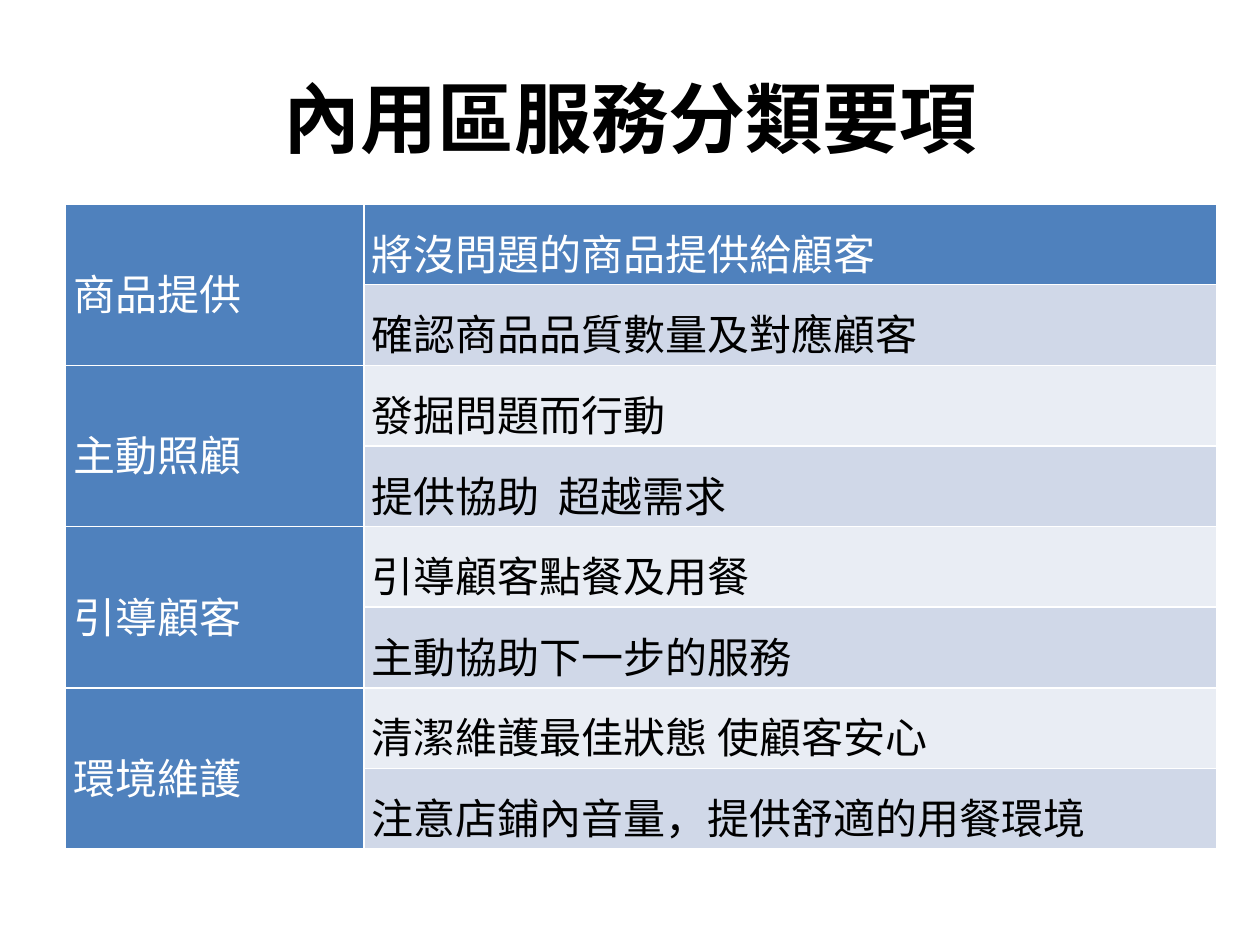
from lxml.etree import SubElement
from pptx import Presentation
from pptx.dml.color import RGBColor
from pptx.enum.text import MSO_ANCHOR as Anchor, PP_ALIGN as Align
from pptx.oxml import parse_xml
from pptx.oxml.ns import nsdecls, qn

PX = 9144  # 100 px to the inch
FONT = "Noto Sans CJK SC"
COLORS = {"accent": "4F81BD", "dark_band": "D0D8E8", "light_band": "E9EDF4",
          "white": "FFFFFF", "black": "000000"}
SERVICES = [
    ("商品提供", ["將沒問題的商品提供給顧客", "確認商品品質數量及對應顧客"]),
    ("主動照顧", ["發掘問題而行動", "提供協助  超越需求"]),
    ("引導顧客", ["引導顧客點餐及用餐", "主動協助下一步的服務"]),
    ("環境維護", ["清潔維護最佳狀態 使顧客安心", "注意店鋪內音量，提供舒適的用餐環境"]),
]
COLUMN_WIDTHS = [237, 677]
ROW_HEIGHT = 64
CELL_FORMAT = {"margin_left": 6 * PX, "margin_right": 6 * PX, "margin_top": 0,
               "margin_bottom": 0, "vertical_anchor": Anchor.MIDDLE}


def write_text(frame, text, size, color, bold, align):
    para = frame.paragraphs[0]
    para.alignment = align
    span = para.add_run()
    span.text = text
    span.font.size = size * 12700
    span.font.bold = bold
    span.font.color.rgb = RGBColor.from_string(COLORS[color])
    span.font.name = FONT
    SubElement(span.font._element, qn("a:ea")).set("typeface", FONT)
    return para


def fill_cell(cell, text, fill, color):
    for name, value in CELL_FORMAT.items():
        setattr(cell, name, value)
    cell.fill.solid()
    cell.fill.fore_color.rgb = RGBColor.from_string(COLORS[fill])
    # Borders come before the fill in the cell properties
    for index, side in enumerate(["lnL", "lnR", "lnT", "lnB"]):
        cell._tc.tcPr.insert(index, parse_xml(
            f'<a:{side} {nsdecls("a")} w="12700"><a:solidFill>'
            f'<a:srgbClr val="{COLORS["white"]}"/></a:solidFill></a:{side}>'))
    if text:
        para = write_text(cell.text_frame, text, 24, color, False, Align.JUSTIFY)
        para.line_spacing = 1.25


deck = Presentation()
deck.slide_width, deck.slide_height = 1000 * PX, 750 * PX
page = deck.slides.add_slide(deck.slide_layouts[5])

# Title
title = page.shapes.title
title_box = {"left": 50, "top": 30, "width": 900, "height": 125}
for name, value in title_box.items():
    setattr(title, name, value * PX)
title.text_frame.vertical_anchor = Anchor.MIDDLE
write_text(title.text_frame, "內用區服務分類要項", 44, "black", True, Align.CENTER)

# Table grid
row_count = sum(len(items) for _, items in SERVICES)
table = page.shapes.add_table(row_count, 2, 52 * PX, 162 * PX, sum(COLUMN_WIDTHS) * PX,
                              row_count * ROW_HEIGHT * PX).table
for column, width in zip(table.columns, COLUMN_WIDTHS):
    column.width = width * PX
for row in table.rows:
    row.height = ROW_HEIGHT * PX

# Each service spans the rows of its items
row_index = 0
for service, items in SERVICES:
    first_row = row_index
    for item in items:
        label = service if row_index == first_row else ""
        fill_cell(table.cell(row_index, 0), label, "accent", "white")
        if row_index == 0:
            fill, color = "accent", "white"
        else:
            fill, color = ("dark_band" if row_index % 2 else "light_band"), "black"
        fill_cell(table.cell(row_index, 1), item, fill, color)
        row_index += 1
    table.cell(first_row, 0).merge(table.cell(row_index - 1, 0))

deck.save("out.pptx")
